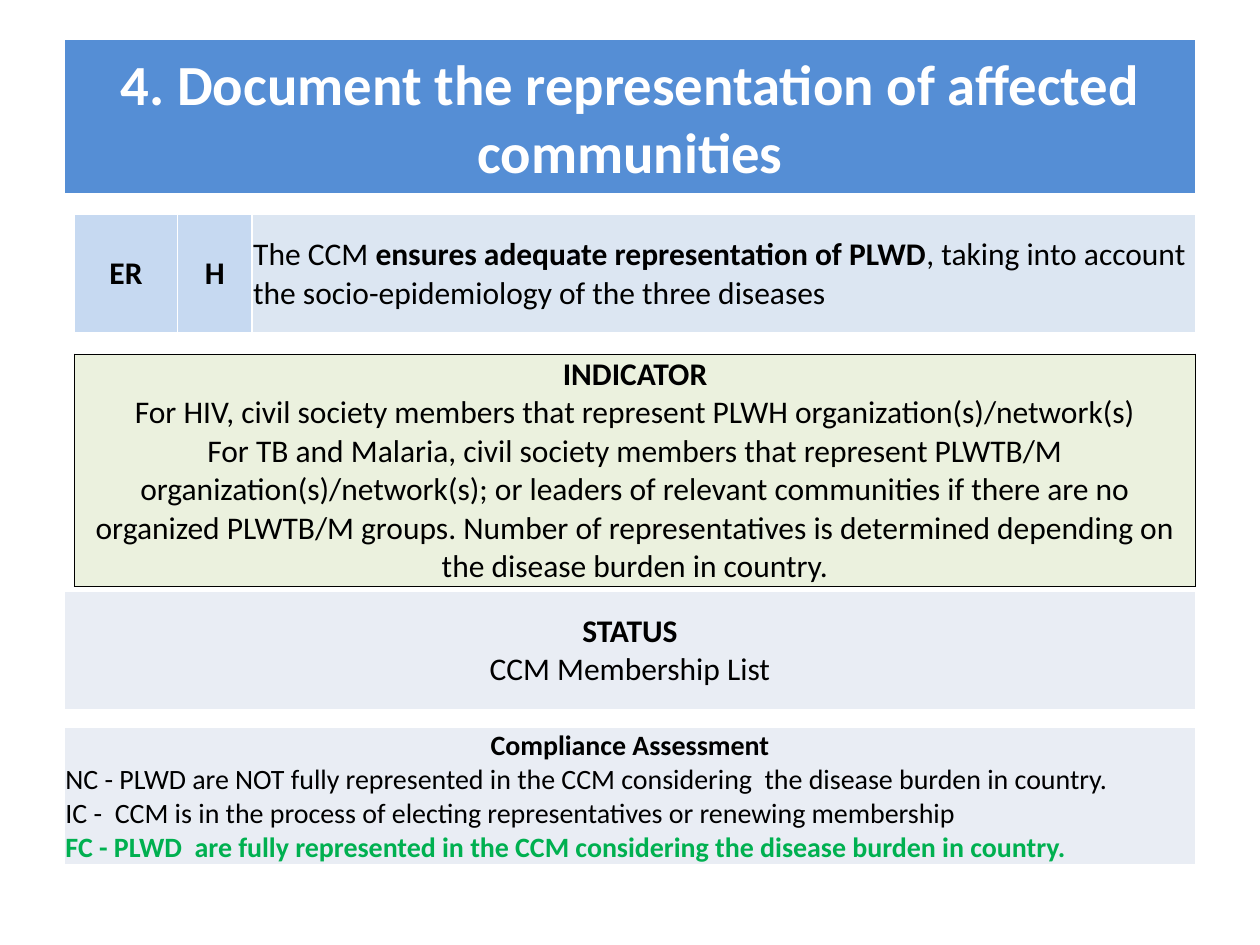
"""Build the slide on documenting the representation of affected communities."""
from lxml import etree
from pptx import Presentation
from pptx.dml.color import RGBColor
from pptx.enum.text import MSO_ANCHOR, MSO_AUTO_SIZE, PP_ALIGN
from pptx.oxml.ns import qn
from pptx.util import Inches, Pt

CENTER, LEFT = PP_ALIGN.CENTER, PP_ALIGN.LEFT
MIDDLE = MSO_ANCHOR.MIDDLE
NO_FIT = MSO_AUTO_SIZE.NONE
FONT = "Calibri"
BLACK, WHITE, GREEN = "000000", "FFFFFF", "00B050"
TITLE_BLUE, CODE_BLUE, RULE_BLUE = "558ED5", "C6D9F1", "DCE6F2"
PALE_GREEN, PALE_GREY = "EBF1DE", "E9EDF4"

TITLE = "4. Document the representation of affected communities"

# A paragraph is (alignment, colour, [(text, bold), ...]); a cell is (fill, paragraphs).
INDICATOR = [
    (CENTER, BLACK, [("INDICATOR", True)]),
    (CENTER, BLACK, [("For HIV, civil society members that represent PLWH organization(s)/network(s)", False)]),
    (CENTER, BLACK, [("For TB and Malaria, civil society members that represent PLWTB/M "
                      "organization(s)/network(s); or leaders of relevant communities if there are no "
                      "organized PLWTB/M groups. Number of representatives is determined depending on "
                      "the disease burden in country.", False)]),
]
REQUIREMENT = [
    (LEFT, BLACK, [("The CCM ", False), ("ensures adequate representation of PLWD", True),
                   (", taking into account the socio-epidemiology of the three diseases", False)]),
]
COMPLIANCE = [
    (CENTER, BLACK, [("Compliance Assessment", True)]),
    (LEFT, BLACK, [("NC - PLWD are NOT fully represented in the CCM considering  the disease burden in country.", False)]),
    (LEFT, BLACK, [("IC -  CCM is in the process of electing representatives or renewing membership", False)]),
    (LEFT, GREEN, [("FC - PLWD  are fully represented in the CCM considering the disease burden in country.", True)]),
]
STATUS = [
    (CENTER, BLACK, [("STATUS", True)]),
    (CENTER, BLACK, [("CCM Membership List", False)]),
]
TABLES = [
    {"at": (0.59, 2.81), "columns": [8.9], "height": 1.81, "size": 18, "border": (BLACK, 0.5),
     "cells": [(PALE_GREEN, INDICATOR)]},
    {"at": (0.59, 1.7), "columns": [0.82, 0.59, 7.49], "height": 0.94, "size": 18, "border": (WHITE, 1),
     "cells": [(CODE_BLUE, [(CENTER, BLACK, [("ER", True)])]),
               (CODE_BLUE, [(CENTER, BLACK, [("H", True)])]),
               (RULE_BLUE, REQUIREMENT)]},
    {"at": (0.51, 5.77), "columns": [8.98], "height": 1.08, "size": 16, "border": (WHITE, 1),
     "cells": [(PALE_GREY, COMPLIANCE)]},
    {"at": (0.51, 4.69), "columns": [8.98], "height": 0.94, "size": 18, "border": (WHITE, 1),
     "cells": [(PALE_GREY, STATUS)]},
]


def paint(fill, color):
    """Give a fill one solid colour."""
    fill.solid()
    fill.fore_color.rgb = RGBColor.from_string(color)


def style_font(font, size, color):
    """Set the typeface, size and colour of a font."""
    font.name, font.size = FONT, Pt(size)
    font.color.rgb = RGBColor.from_string(color)


def add_borders(cell, color, width):
    """Draw the four borders of a cell."""
    properties = cell._tc.get_or_add_tcPr()
    for side in ("lnL", "lnR", "lnT", "lnB"):
        line = etree.SubElement(properties, qn(f"a:{side}"), w=str(Pt(width)))
        solid = etree.SubElement(line, qn("a:solidFill"))
        etree.SubElement(solid, qn("a:srgbClr"), val=color)


def write_cell(cell, paragraphs, size):
    """Fill a cell with formatted paragraphs."""
    cell.vertical_anchor = MIDDLE
    cell.margin_left = cell.margin_right = cell.margin_top = Inches(0.01)
    cell.margin_bottom = 0
    frame = cell.text_frame
    for index, (alignment, color, spans) in enumerate(paragraphs):
        para = frame.add_paragraph() if index else frame.paragraphs[0]
        para.alignment = alignment
        style_font(para.font, size, color)
        for text, bold in spans:
            span = para.add_run()
            span.text = text
            style_font(span.font, size, color)
            span.font.bold = bold


def add_band(page, band):
    """Add a one-row table."""
    left, top = band["at"]
    widths = band["columns"]
    table = page.shapes.add_table(1, len(widths), Inches(left), Inches(top),
                                  Inches(sum(widths)), Inches(band["height"])).table
    for column, width in zip(table.columns, widths):
        column.width = Inches(width)
    for cell, (fill, paragraphs) in zip(table.rows[0].cells, band["cells"]):
        add_borders(cell, *band["border"])
        paint(cell.fill, fill)
        write_cell(cell, paragraphs, band["size"])


def add_title(page):
    """Format the title placeholder as a rounded banner."""
    title = page.shapes.title
    title.left, title.top, title.width, title.height = map(Inches, (0.5, 0.3, 9, 1.25))
    outline = etree.SubElement(title._element.spPr, qn("a:prstGeom"), prst="roundRect")
    etree.SubElement(outline, qn("a:avLst"))
    paint(title.fill, TITLE_BLUE)
    paint(title.line.fill, WHITE)
    title.line.width = Pt(2)
    frame = title.text_frame
    frame.text = TITLE
    frame.auto_size, frame.vertical_anchor = NO_FIT, MIDDLE
    para = frame.paragraphs[0]
    para.alignment = CENTER
    style_font(para.font, 32.4, WHITE)
    para.font.bold = True


def main():
    """Build and save the deck."""
    deck = Presentation()
    deck.slide_width, deck.slide_height = Inches(10), Inches(7.5)
    page = deck.slides.add_slide(deck.slide_layouts.get_by_name("Title Only"))
    add_title(page)
    for band in TABLES:
        add_band(page, band)
    deck.save("out.pptx")


if __name__ == "__main__":
    main()
